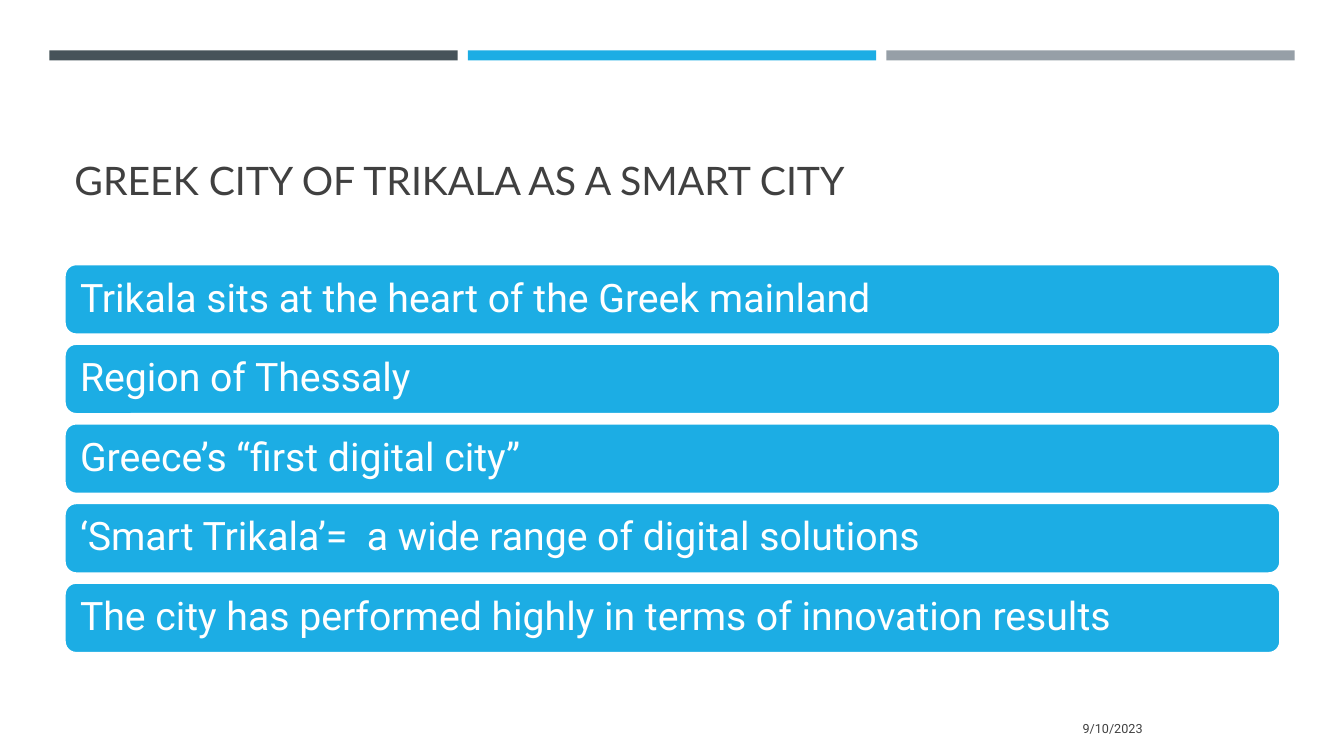
from dataclasses import dataclass

from pptx import Presentation
from pptx.dml.color import RGBColor
from pptx.enum.shapes import MSO_SHAPE
from pptx.enum.text import MSO_ANCHOR, PP_ALIGN
from pptx.util import Inches, Pt

RECT, ROUND = MSO_SHAPE.RECTANGLE, MSO_SHAPE.ROUNDED_RECTANGLE
LEFT, RIGHT = PP_ALIGN.LEFT, PP_ALIGN.RIGHT
MIDDLE, BOTTOM = MSO_ANCHOR.MIDDLE, MSO_ANCHOR.BOTTOM


@dataclass(frozen=True)
class Theme:
    dark: str = "465359"
    blue: str = "1CADE4"
    gray: str = "969FA7"
    ink: str = "404040"
    white: str = "FFFFFF"
    head: str = "Lato"
    body: str = "Roboto"
    large: int = 28
    small: int = 9
    edge: float = 1.75


THEME = Theme()
WIDTH, HEIGHT = 13.33, 7.5

# Top stripes: three columns
STRIPE_X, STRIPE_Y = 0.49, 0.5
STRIPE_W, STRIPE_H, STRIPE_STEP = 4.05, 0.1, 4.15

# Fact bars: one column, five rows
BAR_X, BAR_Y = 0.64, 2.62
BAR_W, BAR_H, BAR_STEP = 12.06, 0.7, 0.79

FACTS = (
    "Trikala sits at the heart of the Greek mainland",
    "Region of Thessaly",
    "Greece’s “first digital city”",
    "‘Smart Trikala’=  a wide range of digital solutions",
    "The city has performed highly in terms of innovation results",
)


def rgb(code):
    return RGBColor.from_string(code)


def write(shape, text, font, size, color, align=LEFT, anchor=MIDDLE):
    frame = shape.text_frame
    frame.word_wrap = True
    frame.vertical_anchor = anchor
    para = frame.paragraphs[0]
    para.text = text
    para.alignment = align
    para.font.name = font
    para.font.size = Pt(size)
    para.font.color.rgb = rgb(color)
    return frame


def add_box(slide, kind, place, fill):
    box = slide.shapes.add_shape(kind, *map(Inches, place))
    box.shadow.inherit = False
    box.fill.solid()
    box.fill.fore_color.rgb = rgb(fill)
    box.line.fill.background()
    return box


def add_label(slide, place, *style):
    label = slide.shapes.add_textbox(*map(Inches, place))
    write(label, *style)


def add_stripes(slide):
    for col, color in enumerate((THEME.dark, THEME.blue, THEME.gray)):
        left = STRIPE_X + col * STRIPE_STEP
        add_box(slide, RECT, (left, STRIPE_Y, STRIPE_W, STRIPE_H), color)


def add_fact(slide, row, text):
    top = BAR_Y + row * BAR_STEP
    bar = add_box(slide, ROUND, (BAR_X, top, BAR_W, BAR_H), THEME.blue)
    bar.line.color.rgb = rgb(THEME.white)
    bar.line.width = Pt(THEME.edge)
    frame = write(bar, text, THEME.body, THEME.large, THEME.white)
    frame.margin_left = frame.margin_right = Inches(0.12)
    frame.paragraphs[0].line_spacing = 0.9


def main():
    deck = Presentation()
    deck.slide_width, deck.slide_height = Inches(WIDTH), Inches(HEIGHT)
    slide = deck.slides.add_slide(deck.slide_layouts[6])
    add_stripes(slide)
    add_label(slide, (BAR_X, 0.77, BAR_W, 1.3),
              "GREEK CITY OF TRIKALA AS A SMART CITY",
              THEME.head, THEME.large, THEME.ink, LEFT, BOTTOM)
    add_label(slide, (8.32, 7.03, 3.11, 0.4), "9/10/2023",
              THEME.body, THEME.small, THEME.ink, RIGHT)
    for row, text in enumerate(FACTS):
        add_fact(slide, row, text)
    deck.save("out.pptx")


if __name__ == "__main__":
    main()
